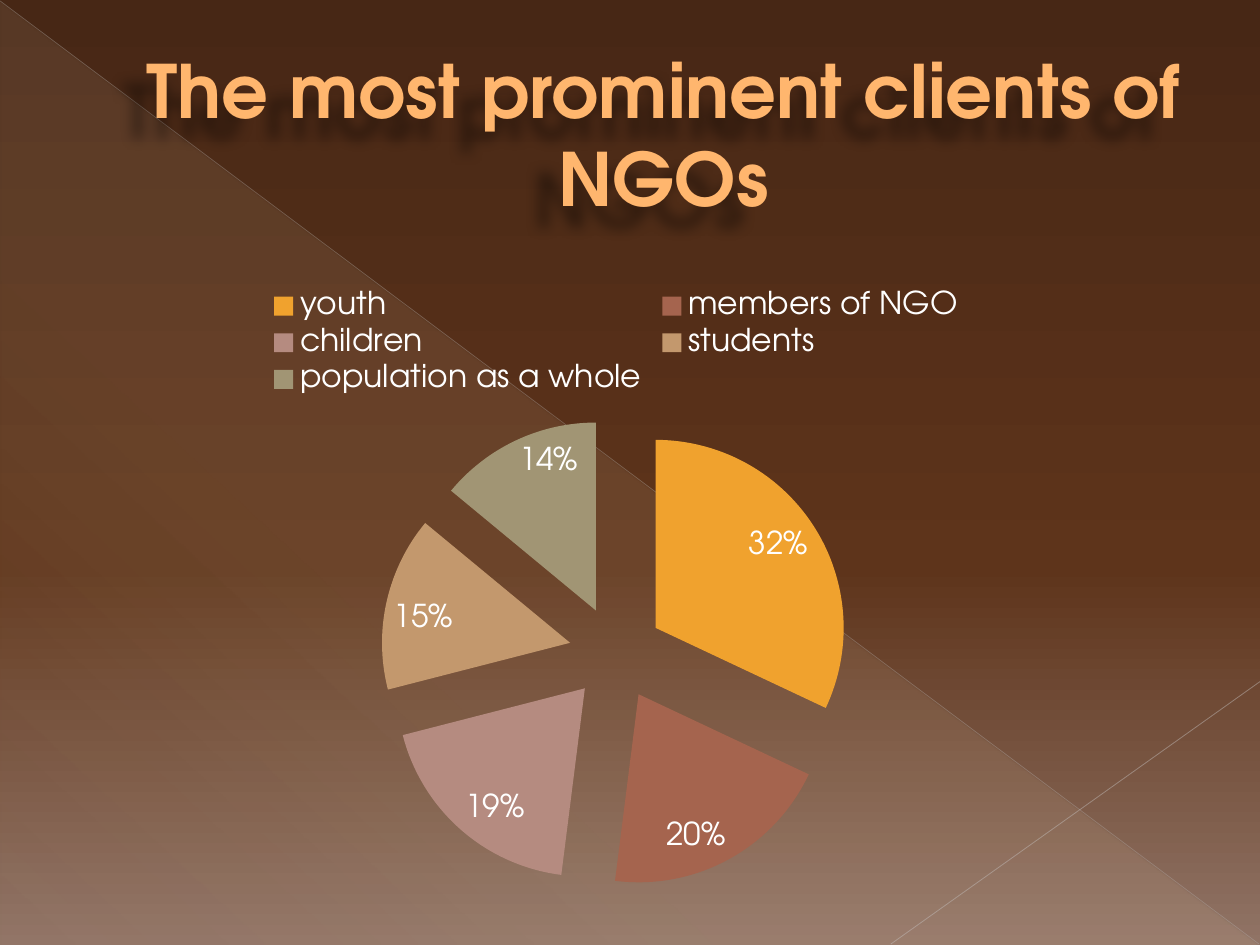
from lxml.etree import SubElement
from pptx import Presentation
from pptx.chart.data import CategoryChartData
from pptx.dml.color import RGBColor
from pptx.enum.chart import XL_CHART_TYPE, XL_LABEL_POSITION, XL_LEGEND_POSITION
from pptx.enum.shapes import MSO_CONNECTOR, MSO_SHAPE
from pptx.enum.text import MSO_ANCHOR, PP_ALIGN
from pptx.oxml import parse_xml
from pptx.oxml.ns import nsdecls, qn
from pptx.util import Pt


def colour(value):
    return RGBColor.from_string(value)


def set_alpha(colour_element, percent):
    SubElement(colour_element, qn("a:alpha"), val=str(percent * 1000))


class ClientsSlide:
    font_name = "TeX Gyre Adventor"
    title_colour = "FFB66E"
    title_outline = "A67020"
    text_colour = "FFFFFF"

    def __init__(self, presentation):
        self.slide = presentation.slides.add_slide(presentation.slide_layouts[6])
        self.shapes = self.slide.shapes

    def style_font(self, font, size, value):
        font.name = self.font_name
        font.size = Pt(size)
        font.color.rgb = colour(value)

    def gradient(self, fill, owner, stops, angle):
        fill.gradient()
        fill.gradient_angle = 360 - angle
        stop_list = next(owner.iter(qn("a:gsLst")))
        for stop in list(stop_list):
            stop_list.remove(stop)
        for position, value, opacity in stops:
            stop = SubElement(stop_list, qn("a:gs"), pos=str(position * 1000))
            set_alpha(SubElement(stop, qn("a:srgbClr"), val=value), opacity)

    def background(self, stops, angle):
        self.gradient(self.slide.background.fill, self.slide.element, stops, angle)

    def triangle(self, left, top, width, height, stops, angle):
        panel = self.shapes.add_shape(
            MSO_SHAPE.RIGHT_TRIANGLE, Pt(left), Pt(top), Pt(width), Pt(height))
        panel.shadow.inherit = False
        panel.line.fill.background()
        self.gradient(panel.fill, panel.element, stops, angle)

    def line(self, start, end, value, width, opacity):
        ray = self.shapes.add_connector(
            MSO_CONNECTOR.STRAIGHT, *(Pt(length) for length in (*start, *end)))
        ray.line.color.rgb = colour(value)
        ray.line.width = Pt(width)
        set_alpha(next(ray.element.spPr.iter(qn("a:srgbClr"))), opacity)
        SubElement(ray.element.spPr, qn("a:effectLst"))

    def title(self, text, left, top, width, height, size, indent):
        heading = self.shapes.add_textbox(Pt(left), Pt(top), Pt(width), Pt(height))
        frame = heading.text_frame
        frame.word_wrap = True
        frame.vertical_anchor = MSO_ANCHOR.MIDDLE
        paragraph = frame.paragraphs[0]
        paragraph.alignment = PP_ALIGN.CENTER
        properties = paragraph._p.get_or_add_pPr()
        properties.set("marL", str(Pt(indent)))
        properties.set("indent", "0")
        run = paragraph.add_run()
        run.text = text
        run.font.bold = True
        self.style_font(run.font, size, self.title_colour)
        run._r.get_or_add_rPr().insert(0, parse_xml(
            f'<a:ln {nsdecls("a")} w="{Pt(0.5)}"><a:solidFill>'
            f'<a:srgbClr val="{self.title_outline}"/></a:solidFill></a:ln>'))
        heading.element.spPr.append(parse_xml(
            f'<a:effectLst {nsdecls("a")}><a:outerShdw blurRad="{Pt(8)}" dist="{Pt(18)}" '
            'dir="8400000" algn="tl" rotWithShape="0"><a:srgbClr val="000000">'
            '<a:alpha val="40000"/></a:srgbClr></a:outerShdw></a:effectLst>'))

    def pie(self, shares, left, top, width, height, size, explosion):
        data = CategoryChartData()
        data.categories = [client for client, _, _ in shares]
        data.add_series("Series 1", [share for _, share, _ in shares])
        chart = self.shapes.add_chart(
            XL_CHART_TYPE.PIE, Pt(left), Pt(top), Pt(width), Pt(height), data).chart
        self.style_font(chart.font, size, self.text_colour)
        chart.has_title = False
        chart.has_legend = True
        chart.legend.position = XL_LEGEND_POSITION.TOP
        chart.legend.include_in_layout = False
        plot = chart.plots[0]
        plot.vary_by_categories = True
        clients = plot.series[0]
        for index, (_, _, value) in enumerate(shares):
            wedge = clients.points[index].format.fill
            wedge.solid()
            wedge.fore_color.rgb = colour(value)
        clients._element.find(qn("c:tx")).addnext(
            parse_xml(f'<c:explosion {nsdecls("c")} val="{explosion}"/>'))
        labels = clients.data_labels
        labels.show_value = False
        labels.show_percentage = True
        labels.number_format = "0%"
        labels.number_format_is_linked = False
        labels.position = XL_LABEL_POSITION.INSIDE_END
        self.style_font(labels.font, size, self.text_colour)


def main():
    presentation = Presentation()
    presentation.slide_width = Pt(720)
    presentation.slide_height = Pt(540)
    page = ClientsSlide(presentation)
    page.background([(0, "472715", 100), (60, "5E341B", 100), (100, "907365", 100)], 90)
    page.triangle(0.5, 1, 719, 539,
                  [(0, "FBEEC9", 10), (70, "FBEEC9", 8), (100, "FBEEC9", 1)], 133)
    page.line((0, 0.5), (719.5, 539.5), "BCB7B4", 0.39, 35)
    page.line((720, 389.5), (509, 539.5), "C4BFBD", 0.47, 45)
    page.title("The most prominent clients of NGOs", 36, 21, 648, 110, 42, 38)
    shares = [
        ("youth", 32, "F0A22E"),
        ("members of NGO", 20, "A5644E"),
        ("children", 19, "B58B80"),
        ("students", 15, "C3986D"),
        ("population as a whole", 14, "A19574"),
    ]
    page.pie(shares, 28, 157.5, 648, 360, 18, 25)
    presentation.save("out.pptx")


if __name__ == "__main__":
    main()
